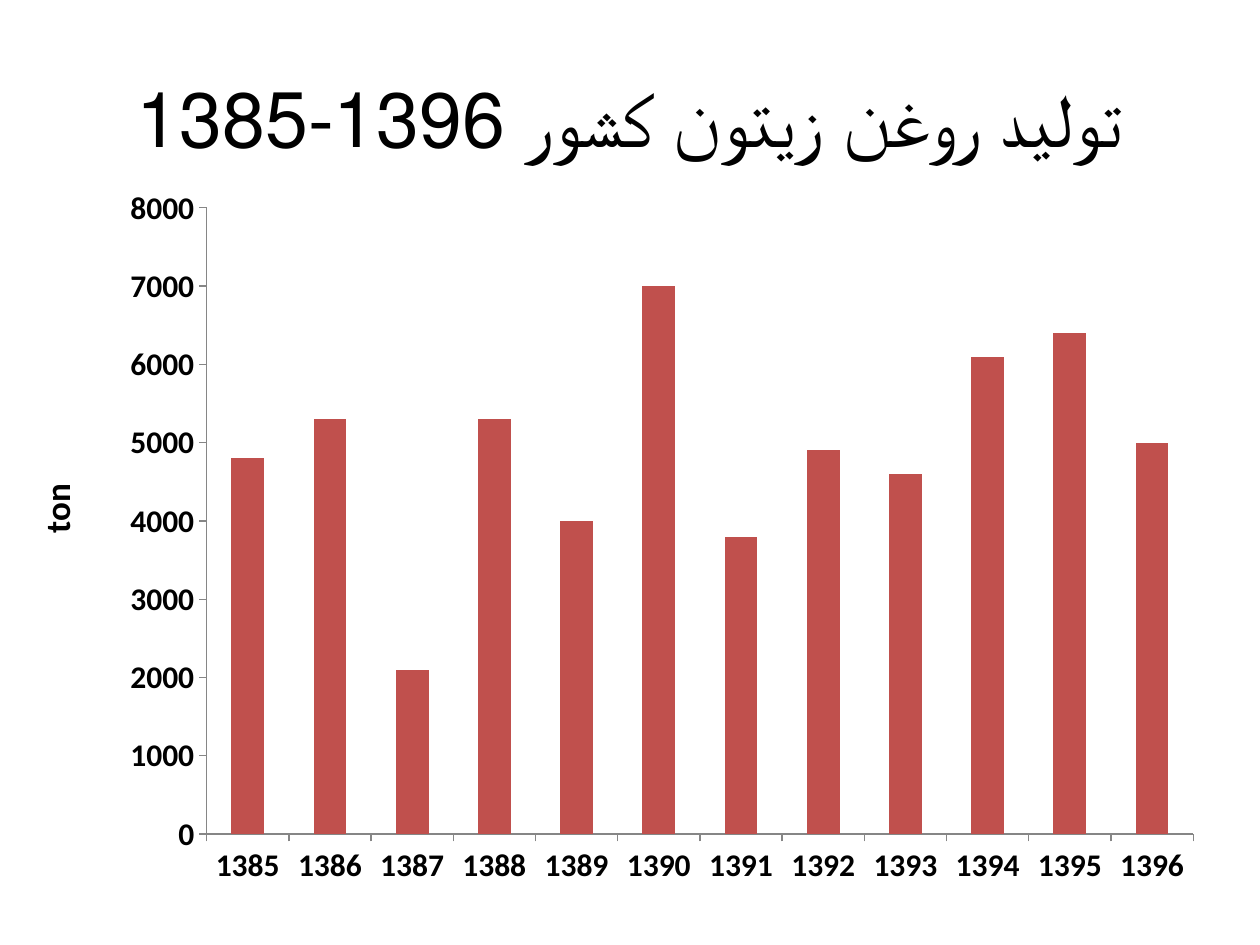
"""Build a slide with a column chart of yearly olive oil production."""
from dataclasses import dataclass

from lxml import etree
from pptx import Presentation
from pptx.chart.data import CategoryChartData
from pptx.dml.color import RGBColor
from pptx.enum.chart import XL_CHART_TYPE, XL_TICK_MARK
from pptx.enum.text import MSO_ANCHOR, MSO_AUTO_SIZE, PP_ALIGN
from pptx.oxml.ns import qn
from pptx.util import Inches, Pt

COLUMN_CLUSTERED = XL_CHART_TYPE.COLUMN_CLUSTERED
TICK_OUTSIDE = XL_TICK_MARK.OUTSIDE
ANCHOR_MIDDLE = MSO_ANCHOR.MIDDLE
NO_AUTO_SIZE = MSO_AUTO_SIZE.NONE
ALIGN_CENTER = PP_ALIGN.CENTER

BLACK = RGBColor(0x00, 0x00, 0x00)
BAR_RED = RGBColor(0xC0, 0x50, 0x4D)
AXIS_GREY = RGBColor(0x86, 0x86, 0x86)
FONT_NAME = "Calibri"
TITLE_ONLY_LAYOUT = 5

FIRST_YEAR = 1385
PRODUCTION_TONS = (4800, 5300, 2100, 5300, 4000, 7000,
                   3800, 4900, 4600, 6100, 6400, 5000)


@dataclass(frozen=True)
class Box:
    left: float
    top: float
    width: float
    height: float

    def lengths(self) -> tuple:
        return tuple(Inches(value) for value in
                     (self.left, self.top, self.width, self.height))


TITLE_BOX = Box(0.5, 0.3, 9, 1.25)
UNIT_BOX = Box(0.05, 3.62, 0.79, 0.83)
CHART_BOX = Box(0.85, 1.39, 8.79, 5.75)
PLOT_BOX = Box(1.64, 1.65, 7.83, 4.97)


def format_font(font, *, size: float, bold: bool) -> None:
    font.name = FONT_NAME
    font.size = Pt(size)
    font.bold = bold
    font.color.rgb = BLACK


def write_text(shape, text: str, *, size: float, bold: bool = False,
               right_to_left: bool = False) -> None:
    frame = shape.text_frame
    frame.text = text
    frame.word_wrap = True
    frame.auto_size = NO_AUTO_SIZE
    frame.vertical_anchor = ANCHOR_MIDDLE
    paragraph = frame.paragraphs[0]
    paragraph.alignment = ALIGN_CENTER
    if right_to_left:
        paragraph._p.get_or_add_pPr().set("rtl", "1")
    format_font(paragraph.runs[0].font, size=size, bold=bold)


def place_plot_area(chart, chart_box: Box, plot_box: Box) -> None:
    plot_area = chart._chartSpace.chart.plotArea
    for old_layout in plot_area.findall(qn("c:layout")):
        plot_area.remove(old_layout)
    layout = etree.Element(qn("c:layout"))
    plot_area.insert(0, layout)
    manual = etree.SubElement(layout, qn("c:manualLayout"))
    settings = {
        "layoutTarget": "inner",
        "xMode": "edge",
        "yMode": "edge",
        "x": (plot_box.left - chart_box.left) / chart_box.width,
        "y": (plot_box.top - chart_box.top) / chart_box.height,
        "w": plot_box.width / chart_box.width,
        "h": plot_box.height / chart_box.height,
    }
    for name, value in settings.items():
        etree.SubElement(manual, qn(f"c:{name}")).set("val", str(value))


def format_axis(axis) -> None:
    axis.has_major_gridlines = False
    axis.major_tick_mark = TICK_OUTSIDE
    axis.format.line.color.rgb = AXIS_GREY
    axis.format.line.width = Pt(0.75)


def add_production_chart(slide) -> None:
    data = CategoryChartData(number_format="0")
    data.categories = [str(FIRST_YEAR + index)
                       for index in range(len(PRODUCTION_TONS))]
    data.add_series("Series 1", PRODUCTION_TONS)
    chart = slide.shapes.add_chart(
        COLUMN_CLUSTERED, *CHART_BOX.lengths(), data).chart
    chart.has_title = False
    chart.has_legend = False
    format_font(chart.font, size=18, bold=True)
    place_plot_area(chart, CHART_BOX, PLOT_BOX)

    for axis in (chart.category_axis, chart.value_axis):
        format_axis(axis)
    chart.value_axis.minimum_scale = 0
    chart.value_axis.maximum_scale = 8000
    chart.value_axis.major_unit = 1000
    chart.value_axis.tick_labels.number_format = "0"
    chart.value_axis.tick_labels.number_format_is_linked = False

    plot = chart.plots[0]
    plot.gap_width = 150
    plot.vary_by_categories = False
    fill = plot.series[0].format.fill
    fill.solid()
    fill.fore_color.rgb = BAR_RED


def main() -> None:
    presentation = Presentation()
    presentation.slide_width = Inches(10)
    presentation.slide_height = Inches(7.5)
    layout = presentation.slide_layouts[TITLE_ONLY_LAYOUT]
    slide = presentation.slides.add_slide(layout)

    unit_label = slide.shapes.add_textbox(*UNIT_BOX.lengths())
    unit_label.rotation = 270
    write_text(unit_label, "ton", size=20, bold=True)

    title = slide.shapes.title
    title.left, title.top, title.width, title.height = TITLE_BOX.lengths()
    write_text(title, "تولید روغن زیتون کشور 1396-1385", size=44,
               right_to_left=True)

    add_production_chart(slide)
    presentation.save("out.pptx")


if __name__ == "__main__":
    main()
